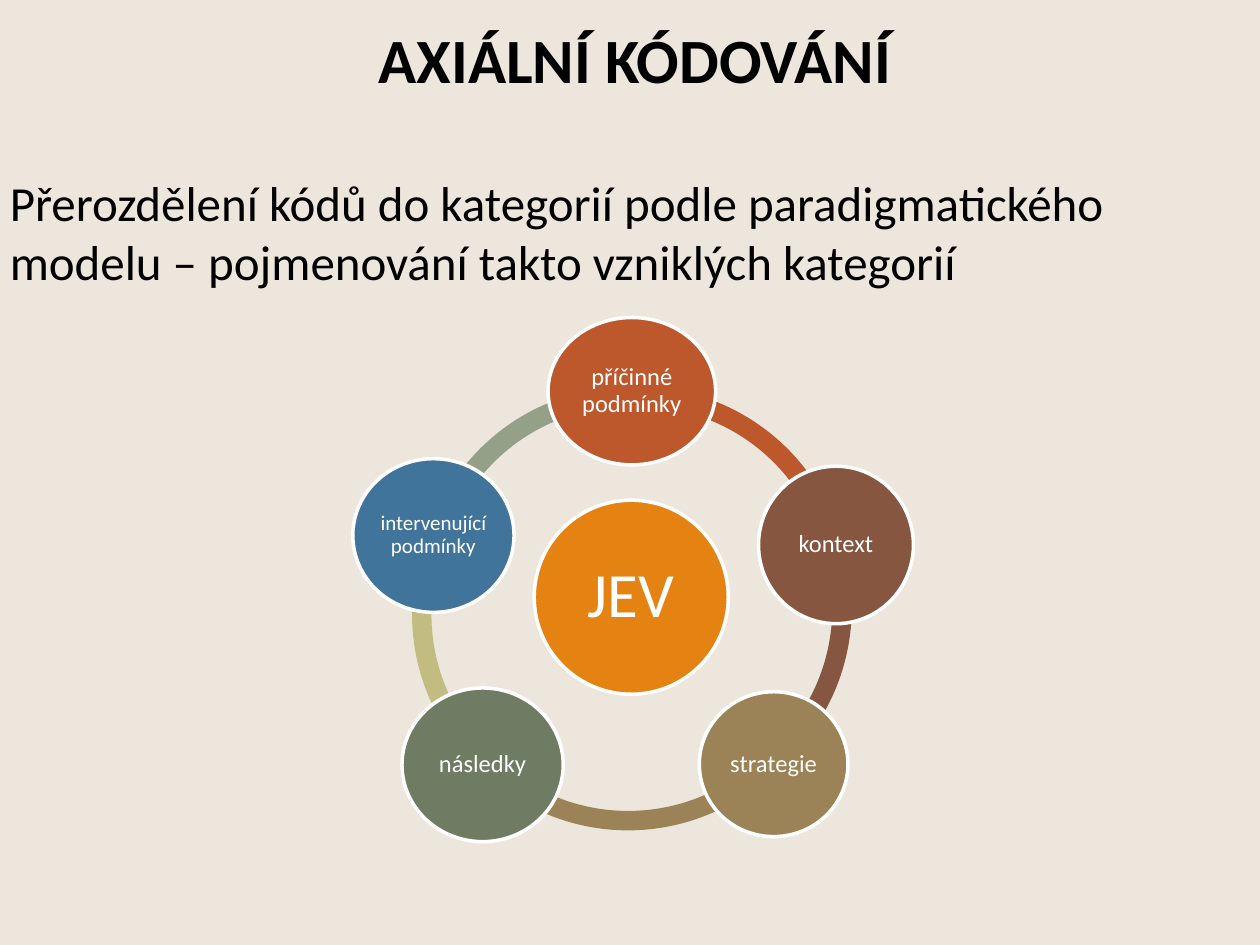
import pptx
import pptx.dml.color
import pptx.enum.shapes
import pptx.enum.text
import pptx.util

Inches = pptx.util.Inches
RGBColor = pptx.dml.color.RGBColor
SHAPE = pptx.enum.shapes.MSO_SHAPE
ALIGN = pptx.enum.text.PP_ALIGN
ANCHOR = pptx.enum.text.MSO_ANCHOR

FONT = "Calibri"
BLACK = RGBColor(0x00, 0x00, 0x00)
WHITE = RGBColor(0xFF, 0xFF, 0xFF)
CREAM = RGBColor(0xEC, 0xE6, 0xDD)
ORANGE = RGBColor(0xE4, 0x83, 0x12)
RUST = RGBColor(0xBD, 0x58, 0x2C)
BROWN = RGBColor(0x86, 0x56, 0x40)
TAN = RGBColor(0x9B, 0x83, 0x57)
OLIVE = RGBColor(0x6F, 0x7B, 0x63)
BLUE = RGBColor(0x40, 0x74, 0x9B)
SAND = RGBColor(0xC2, 0xBC, 0x80)
SAGE = RGBColor(0x94, 0xA0, 0x88)

ARC_SIZE = 3.35
ARC_THICKNESS = 0.046
# Left and top within the diagram, start and end adjustment, colour
ARCS = [
    (0.52, 0.55, 118.66, 162.41, SAGE),
    (0.47, 0.68, 79.83, 121.53, SAND),
    (0.51, 0.72, 26.99, 81.01, TAN),
    (0.61, 0.63, 205.45, 29.77, BROWN),
    (0.59, 0.55, 160.99, 207.15, RUST),
]
# Left, top, width and height within the diagram, text, size, inset, colour
CIRCLES = [
    (1.44, 1.45, 1.54, 1.54, "JEV", 36, 0.05, ORANGE),
    (1.55, 0, 1.33, 1.17, "příčinné podmínky", 14, 0.02, RUST),
    (3.22, 1.18, 1.23, 1.25, "kontext", 14, 0.02, BROWN),
    (2.75, 2.97, 1.18, 1.15, "strategie", 14, 0.02, TAN),
    (0.39, 2.94, 1.28, 1.22, "následky", 14, 0.02, OLIVE),
    (0, 1.12, 1.28, 1.22, "intervenující podmínky", 12, 0.02, BLUE),
]


def add_filled(shapes, kind, box, color):
    shape = shapes.add_shape(kind, *(Inches(length) for length in box))
    shape.shadow.inherit = False
    shape.fill.solid()
    shape.fill.fore_color.rgb = color
    shape.line.fill.background()
    return shape


def write(shape, text, size, color, align, bold=False):
    shape.text_frame.word_wrap = True
    para = shape.text_frame.paragraphs[0]
    para.alignment = align
    span = para.add_run()
    span.text = text
    span.font.name = FONT
    span.font.size = pptx.util.Pt(size)
    span.font.bold = bold
    span.font.color.rgb = color
    return para


def add_body(page, box):
    panel = add_filled(page.shapes, SHAPE.RECTANGLE, box, CREAM)
    panel.text_frame.vertical_anchor = ANCHOR.TOP
    panel.text_frame.margin_top = Inches(0.62)
    write(panel, "Přerozdělení kódů do kategorií podle paradigmatického "
          "modelu – pojmenování takto vzniklých kategorií",
          28, BLACK, ALIGN.LEFT)


def add_title(page, box):
    panel = add_filled(page.shapes, SHAPE.RECTANGLE, box, CREAM)
    panel.text_frame.vertical_anchor = ANCHOR.MIDDLE
    write(panel, "AXIÁLNÍ KÓDOVÁNÍ", 36, BLACK, ALIGN.CENTER, bold=True)


def add_cycle(page, left, top):
    group = page.shapes.add_group_shape()

    # Ring segments
    for x, y, start, end, color in ARCS:
        box = (left + x, top + y, ARC_SIZE, ARC_SIZE)
        arc = add_filled(group.shapes, SHAPE.BLOCK_ARC, box, color)
        for index, value in enumerate((start, end, ARC_THICKNESS)):
            arc.adjustments[index] = value

    # Centre and the five conditions around it
    for x, y, width, height, text, size, inset, color in CIRCLES:
        box = (left + x, top + y, width, height)
        circle = add_filled(group.shapes, SHAPE.OVAL, box, color)
        circle.line.color.rgb = WHITE
        circle.line.width = pptx.util.Pt(2)
        frame = circle.text_frame
        frame.vertical_anchor = ANCHOR.MIDDLE
        frame.margin_left = frame.margin_right = Inches(inset)
        frame.margin_top = frame.margin_bottom = Inches(inset)
        para = write(circle, text, size, WHITE, ALIGN.CENTER)
        para.line_spacing = 0.9


def main():
    deck = pptx.Presentation()
    deck.slide_width = Inches(10)
    deck.slide_height = Inches(7.5)
    page = deck.slides.add_slide(deck.slide_layouts[6])
    add_title(page, (-0.04, 0, 10.16, 0.92))
    add_body(page, (-0.02, 0.75, 10.04, 6.77))
    add_cycle(page, 2.8, 2.52)
    deck.save("out.pptx")


if __name__ == "__main__":
    main()
